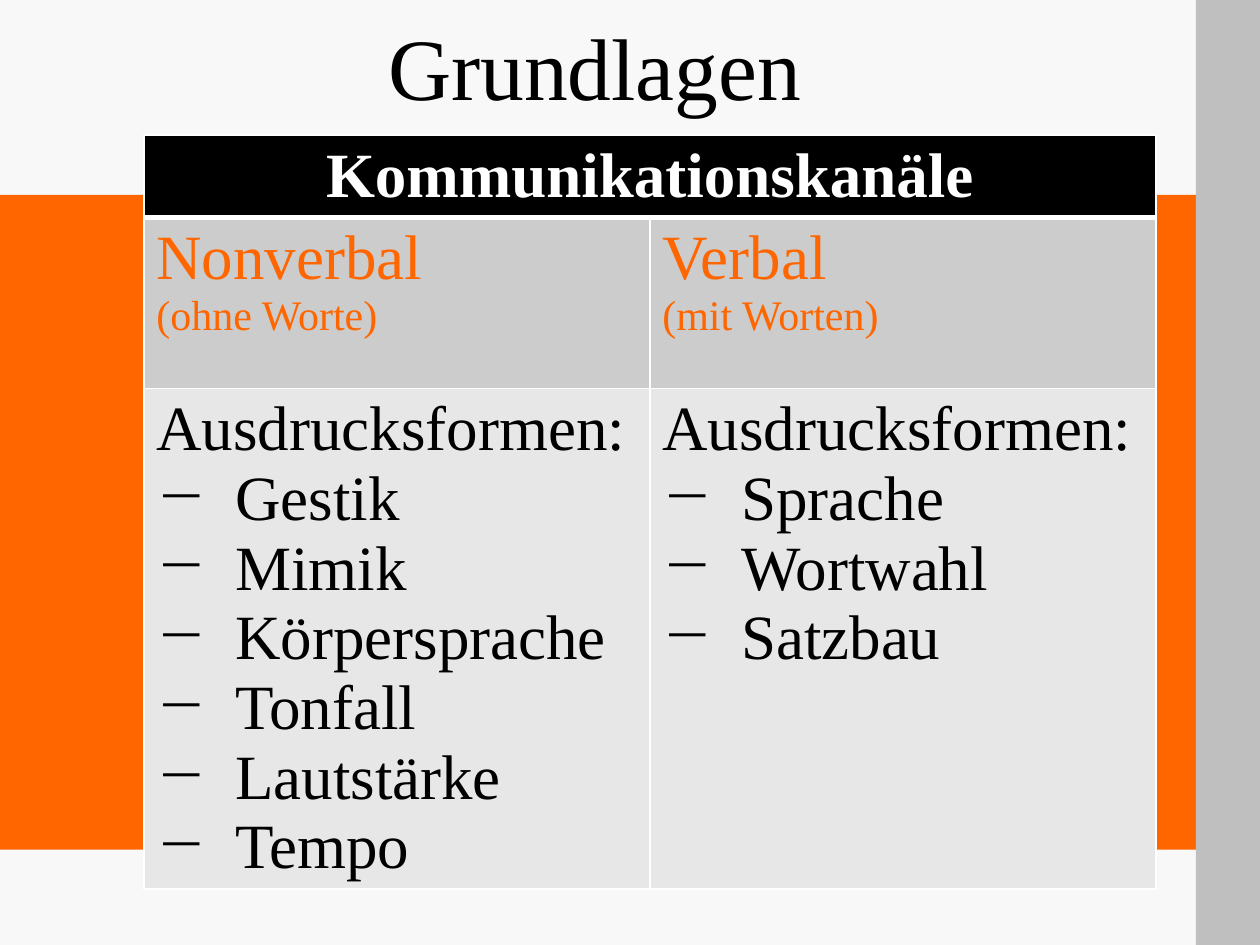
from lxml import etree
from pptx import Presentation
from pptx.dml.color import RGBColor
from pptx.enum import shapes, text
from pptx.oxml import ns
from pptx.util import Cm, Pt

FONT = "Times New Roman"
ORANGE, BLACK, WHITE = "FF6600", "000000", "FFFFFF"
COLUMNS = [
    ("Nonverbal", "(ohne Worte)",
     ["Gestik", "Mimik", "Körpersprache", "Tonfall", "Lautstärke", "Tempo"]),
    ("Verbal", "(mit Worten)", ["Sprache", "Wortwahl", "Satzbau"]),
]


def rgb(value):
    return RGBColor.from_string(value)


def sub(parent, tag, **attrs):
    return etree.SubElement(parent, ns.qn(tag), attrs)


def set_font(p, size, color, bold=False):
    f = p.font
    f.name, f.size, f.bold = FONT, Pt(size), bold
    f.color.rgb = rgb(color)


def add_band(s, left, top, width, height, color):
    sp = s.shapes.add_shape(shapes.MSO_SHAPE.RECTANGLE,
                            Cm(left), Cm(top), Cm(width), Cm(height))
    sp.shadow.inherit = False
    sp.fill.solid()
    sp.fill.fore_color.rgb = rgb(color)
    sp.line.fill.background()


def add_title(s, title):
    sp = s.shapes.title
    sp.left, sp.top, sp.width, sp.height = Cm(0.69), Cm(0.33), Cm(22.6), Cm(2)
    tf = sp.text_frame
    tf.text = title
    tf.vertical_anchor = text.MSO_ANCHOR.MIDDLE
    p = tf.paragraphs[0]
    p.alignment = text.PP_ALIGN.CENTER
    set_font(p, 50, BLACK)


def style_cell(cell, color, top=1, bottom=1):
    """Borders come before the fill, as the schema orders them."""
    tc_pr = cell._tc.get_or_add_tcPr()
    for side, width in zip("LRTB", (1, 1, top, bottom)):
        ln = sub(tc_pr, f"a:ln{side}", w=str(Pt(width)))
        sub(sub(ln, "a:solidFill"), "a:srgbClr", val=WHITE)
    cell.fill.solid()
    cell.fill.fore_color.rgb = rgb(color)


def add_line(cell, line, size, color, bold=False, bullet=False):
    tf = cell.text_frame
    p = tf.add_paragraph() if tf.text else tf.paragraphs[0]
    p.text = line
    if bullet:
        p_pr = p._p.get_or_add_pPr()
        indent = Cm(1.59)
        p_pr.set("marL", str(indent))
        p_pr.set("indent", str(-indent))
        sub(p_pr, "a:buChar", char="−")
    set_font(p, size, color, bold)
    return p


def add_channel_table(s):
    heights = [1.64, 3.45, 10.08]
    table = s.shapes.add_table(3, 2, Cm(2.9), Cm(2.72),
                               Cm(20.4), Cm(sum(heights))).table
    table.horz_banding = False
    for row, height in zip(table.rows, heights):
        row.height = Cm(height)

    header = table.cell(0, 0)
    header.merge(table.cell(0, 1))
    p = add_line(header, "Kommunikationskanäle", 36, WHITE, bold=True)
    p.alignment = text.PP_ALIGN.CENTER

    for col, (channel, note, forms) in enumerate(COLUMNS):
        head, body = table.cell(1, col), table.cell(2, col)
        style_cell(table.cell(0, col), BLACK, bottom=3)
        style_cell(head, "CCCCCC", top=3)
        style_cell(body, "E7E7E7")
        add_line(head, channel, 36, ORANGE)
        add_line(head, note, 24, ORANGE)
        add_line(body, "Ausdrucksformen:", 36, BLACK)
        for form in forms:
            add_line(body, form, 36, BLACK, bullet=True)


def main():
    prs = Presentation()
    prs.slide_width, prs.slide_height = Cm(25.4), Cm(19.05)
    s = prs.slides.add_slide(prs.slide_layouts[5])
    s.background.fill.solid()
    s.background.fill.fore_color.rgb = rgb("F8F8F8")
    add_band(s, 0, 3.93, 24.11, 13.2, ORANGE)
    add_band(s, 24.11, 0, 1.29, 19.05, "BFBFBF")
    add_title(s, "Grundlagen")
    add_channel_table(s)
    prs.save("out.pptx")


if __name__ == "__main__":
    main()
